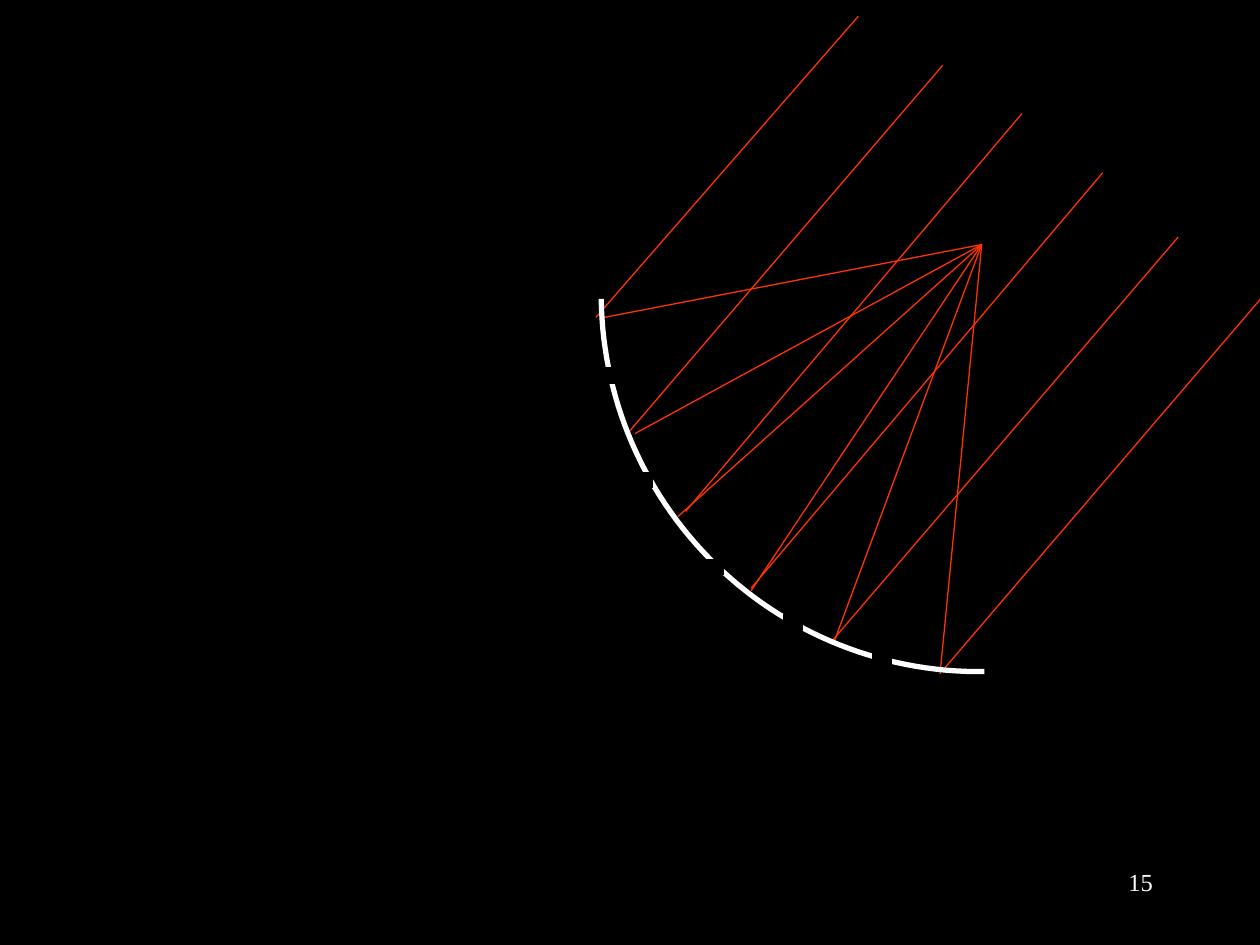
"""Build a slide of parallel rays focused by a segmented concave mirror."""
import math

import pptx
import pptx.dml.color
import pptx.enum.shapes
import pptx.enum.text
import pptx.oxml
import pptx.oxml.ns
import pptx.util
from pptx.util import Cm

BLACK = pptx.dml.color.RGBColor(0x00, 0x00, 0x00)
WHITE = pptx.dml.color.RGBColor(0xFF, 0xFF, 0xFF)
RAY_RED = pptx.dml.color.RGBColor(0xFF, 0x33, 0x00)

FOCUS = (19.79, 4.93)
INCOMING_RAYS = [
    ((12.01, 6.4), (17.3, 0.33)),
    ((12.65, 8.74), (19, 1.32)),
    ((13.82, 10.31), (20.6, 2.29)),
    ((15.14, 11.86), (22.23, 3.48)),
    ((16.79, 12.9), (23.75, 4.78)),
    ((19.05, 13.46), (25.7, 5.69)),
]
REFLECTION_POINTS = [
    (12.17, 6.4), (12.8, 8.74), (13.67, 10.41),
    (15.14, 11.91), (16.81, 12.95), (18.95, 13.59),
]
REFLECTED_RAYS = [(FOCUS, point) for point in REFLECTION_POINTS]

MIRROR_CENTRE = (19.74, 5.92)
MIRROR_RADIUS = 7.62
MIRROR_START_ANGLE = 89.2
MIRROR_STEPS = 60
GAP_CORNERS = [
    (12.07, 7.42), (14.2, 11.28), (15.8, 12.4), (17.6, 13.18), (12.78, 9.53),
]

deck = pptx.Presentation()
deck.slide_width = Cm(25.4)
deck.slide_height = Cm(19.05)
page = deck.slides.add_slide(deck.slide_layouts[6])
page.background.fill.solid()
page.background.fill.fore_color.rgb = BLACK

number_box = page.shapes.add_textbox(Cm(18.21), Cm(17.35), Cm(5.28), Cm(1.27))
number_box.text_frame.word_wrap = True
number_box.text_frame.text = "15"
para = number_box.text_frame.paragraphs[0]
para.alignment = pptx.enum.text.PP_ALIGN.RIGHT
span = para.runs[0]
span.font.name = "Times New Roman"
span.font.size = pptx.util.Pt(14)
span.font.color.rgb = WHITE

for rays in (INCOMING_RAYS, REFLECTED_RAYS):
    ray_group = page.shapes.add_group_shape()
    for (start_x, start_y), (end_x, end_y) in rays:
        ray = ray_group.shapes.add_connector(
            pptx.enum.shapes.MSO_CONNECTOR.STRAIGHT,
            Cm(start_x), Cm(start_y), Cm(end_x), Cm(end_y),
        )
        ray.line.color.rgb = RAY_RED
        ray.line.width = pptx.util.Pt(0.75)
        properties = ray._element.spPr
        properties.append(pptx.oxml.parse_xml(
            f"<a:effectLst {pptx.oxml.ns.nsdecls('a')}/>"
        ))

mirror_points = []
for step in range(MIRROR_STEPS + 1):
    angle = math.radians(MIRROR_START_ANGLE + 90 * step / MIRROR_STEPS)
    mirror_points.append((
        Cm(MIRROR_CENTRE[0] + MIRROR_RADIUS * math.cos(angle)),
        Cm(MIRROR_CENTRE[1] + MIRROR_RADIUS * math.sin(angle)),
    ))
outline = page.shapes.build_freeform(*mirror_points[0])
outline.add_line_segments(mirror_points[1:], close=False)
mirror = outline.convert_to_shape()
mirror.shadow.inherit = False
mirror.fill.background()
mirror.line.color.rgb = WHITE
mirror.line.width = pptx.util.Pt(3)

gap_group = page.shapes.add_group_shape()
for left, top in GAP_CORNERS:
    gap = gap_group.shapes.add_shape(
        pptx.enum.shapes.MSO_SHAPE.RECTANGLE, Cm(left), Cm(top), Cm(0.38), Cm(0.3)
    )
    gap.shadow.inherit = False
    gap.fill.solid()
    gap.fill.fore_color.rgb = BLACK
    gap.line.color.rgb = BLACK
    gap.line.width = pptx.util.Pt(0.75)

deck.save("out.pptx")
